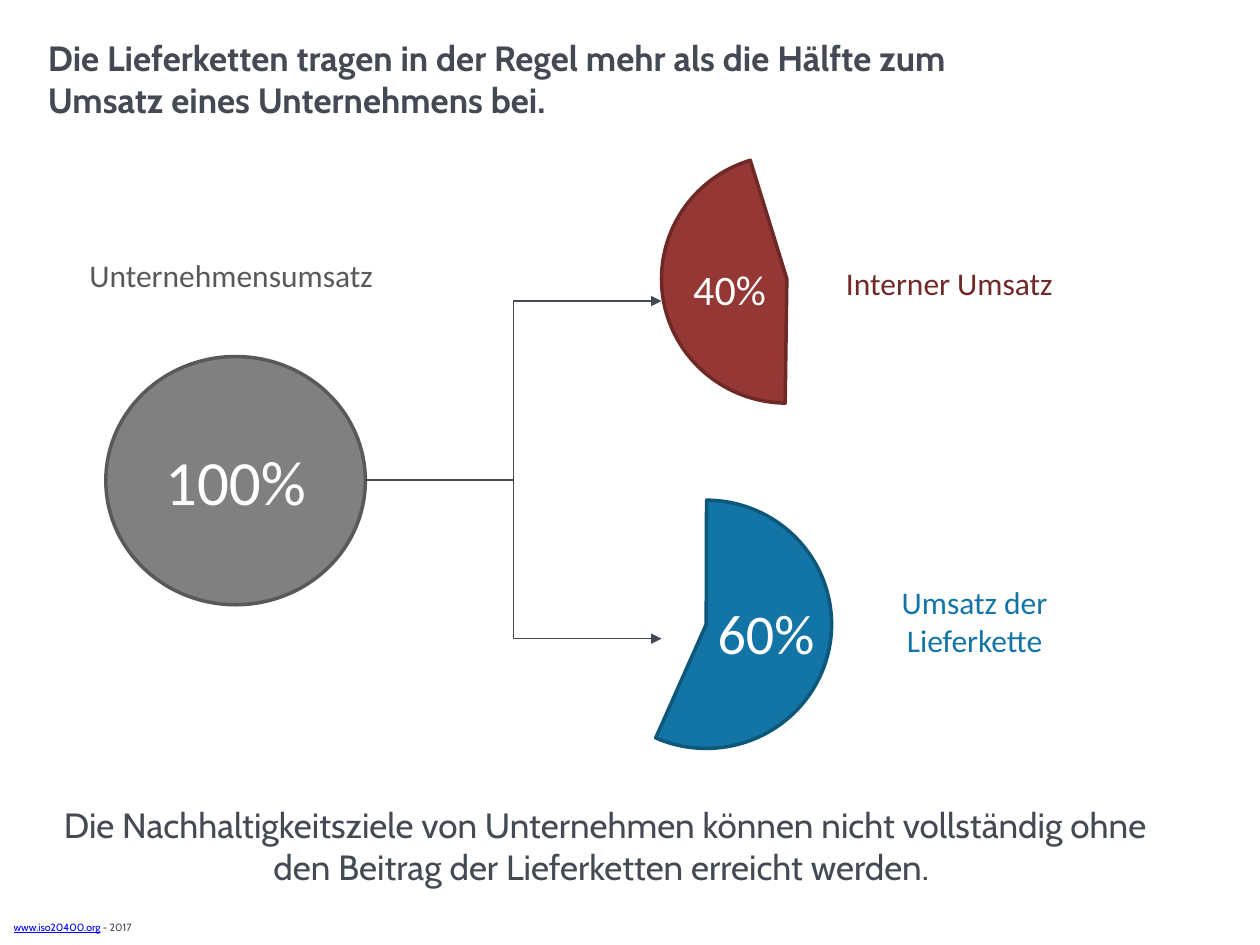
from lxml import etree
from pptx import Presentation
from pptx import util as u
from pptx.dml.color import RGBColor
from pptx.enum import shapes, text
from pptx.oxml.ns import qn

INK = "444953"
CENTER = text.PP_ALIGN.CENTER


def color(hex_string):
    return RGBColor.from_string(hex_string)


def write(shape, *runs, size, font="Calibri", fill=INK, bold=False, align=None,
          anchor=text.MSO_ANCHOR.TOP, wrap=True, underline_first=False):
    frame = shape.text_frame
    frame.auto_size = text.MSO_AUTO_SIZE.NONE
    frame.word_wrap = wrap
    frame.vertical_anchor = anchor
    paragraph = frame.paragraphs[0]
    paragraph.alignment = align
    for index, words in enumerate(runs):
        run = paragraph.add_run()
        run.text = words
        run.font.name = font
        run.font.size = u.Pt(size)
        run.font.bold = bold
        linked = underline_first and index == 0
        run.font.underline = linked
        run.font.color.rgb = color("0000FF" if linked else fill)


presentation = Presentation()
presentation.slide_width = u.Inches(10)
presentation.slide_height = u.Inches(7.5)
slide = presentation.slides.add_slide(presentation.slide_layouts[5])

# Footer
footer = slide.shapes.add_textbox(*map(u.Inches, (0.01, 7.26, 6.47, 0.2)))
write(footer, "www.iso20400.org", " - 2017", size=6, font="Cabin", underline_first=True)

# Title
title = slide.shapes.title
title.left, title.top, title.width, title.height = map(u.Inches, (0.28, 0.43, 7.87, 0.38))
write(title, "Die Lieferketten tragen in der Regel mehr als die Hälfte zum "
      "Umsatz eines Unternehmens bei.", size=20, font="Cabin", bold=True,
      align=text.PP_ALIGN.LEFT, anchor=text.MSO_ANCHOR.MIDDLE)

# Closing statement
statement = slide.shapes.add_textbox(*map(u.Inches, (0.2, 6.33, 9.21, 0.77)))
write(statement, "Die Nachhaltigkeitsziele von Unternehmen können nicht vollständig ohne "
      "den Beitrag der Lieferketten erreicht werden. ", size=20, font="Cabin", align=CENTER)

# Total revenue
total = slide.shapes.add_shape(shapes.MSO_SHAPE.OVAL, *map(u.Inches, (0.84, 2.83, 2.06, 1.97)))
total.shadow.inherit = False
total.fill.solid()
total.fill.fore_color.rgb = color("808080")
total.line.color.rgb = color("595959")
total.line.width = u.Pt(2)
write(total, "100%", size=36, fill="FFFFFF", align=CENTER, anchor=text.MSO_ANCHOR.MIDDLE)
caption = slide.shapes.add_textbox(*map(u.Inches, (0.54, 1.98, 2.59, 0.4)))
write(caption, "Unternehmensumsatz", size=18, fill="595959", align=CENTER)

# Revenue shares: pie corner, start and end angle, fill, outline,
# label, its box and colour, share, its box and size
shares = [
    ((5.25, 1.23), (90.79, 252.87), "953734", "6E2926",
     "Interner Umsatz", (6.08, 2.05, 2.91, 0.4), "702927",
     "40%", (5.4, 2.04, 0.78, 0.5), 24),
    ((4.61, 3.97), (270.15, 113.98), "1275A5", "0D577A",
     "Umsatz der Lieferkette", (6.6, 4.58, 2.27, 0.71), "1275A5",
     "60%", (5.59, 4.7, 0.98, 0.64), 32),
]
for (corner, angles, fill, outline, label, label_box, label_color,
     share, share_box, share_size) in shares:
    group = slide.shapes.add_group_shape()
    pie = group.shapes.add_shape(shapes.MSO_SHAPE.PIE, *map(u.Inches, (*corner, 1.99, 1.97)))
    for index, angle in enumerate(angles):
        pie.adjustments[index] = angle * 0.6  # 60000 units a degree, scaled by 100000
    pie.shadow.inherit = False
    pie.fill.solid()
    pie.fill.fore_color.rgb = color(fill)
    pie.line.color.rgb = color(outline)
    pie.line.width = u.Pt(2)
    write(group.shapes.add_textbox(*map(u.Inches, label_box)), label,
          size=18, fill=label_color, align=CENTER)
    write(group.shapes.add_textbox(*map(u.Inches, share_box)), share,
          size=share_size, fill="FFFFFF", align=CENTER, wrap=False)

# Arrows from the total to both shares
for end_y in (2.39, 5.07):
    arrow = slide.shapes.add_connector(
        shapes.MSO_CONNECTOR.ELBOW, *map(u.Inches, (2.9, 3.81, 5.25, end_y)))
    arrow.line.color.rgb = color(INK)
    arrow.line.width = u.Pt(0.75)
    etree.SubElement(arrow.line._get_or_add_ln(), qn("a:tailEnd"), type="triangle")
    etree.SubElement(arrow._element.spPr, qn("a:effectLst"))

presentation.save("out.pptx")
